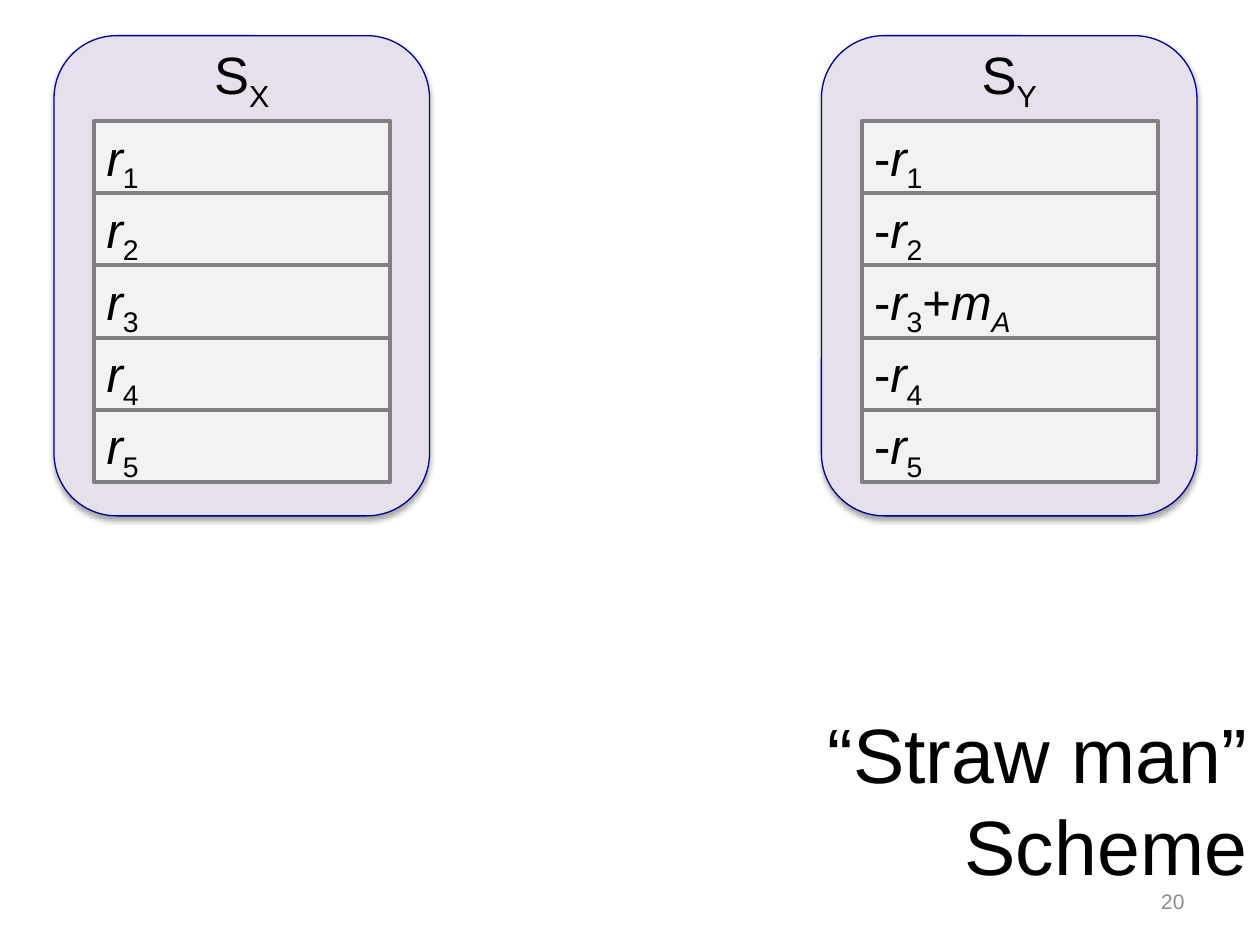
from lxml import etree
from pptx import Presentation
from pptx import util as u
from pptx.dml.color import RGBColor
from pptx.enum import shapes, text
from pptx.oxml import parse_xml

COLORS = {"text": "000000", "server": "E6E0EC", "server_edge": "000090",
          "cell": "F2F2F2", "cell_edge": "808080", "number": "8C8C8C"}
SHADOW = """<a:effectLst xmlns:a="http://schemas.openxmlformats.org/drawingml/2006/main">
<a:outerShdw blurRad="40000" dist="23000" dir="5400000" rotWithShape="0">
<a:srgbClr val="000000"><a:alpha val="35000"/></a:srgbClr></a:outerShdw></a:effectLst>"""


def add_box(kind, left, top, width, height, fill, edge, weight):
    box = slide.shapes.add_shape(kind, u.Cm(left), u.Cm(top), u.Cm(width), u.Cm(height))
    box.shadow.inherit = False
    box.fill.solid()
    box.fill.fore_color.rgb = RGBColor.from_string(COLORS[fill])
    box.line.color.rgb = RGBColor.from_string(COLORS[edge])
    box.line.width = u.Pt(weight)
    return box


def write(frame, runs, size, align, color="text"):
    """Fill the first paragraph; each run is (text, style), style using i = italic, _ = subscript."""
    frame.word_wrap = True
    paragraph = frame.paragraphs[0]
    paragraph.alignment = align
    paragraph.font.size = u.Pt(size)
    paragraph.font.name = "Arial"
    paragraph.font.color.rgb = RGBColor.from_string(COLORS[color])
    for wording, style in runs:
        run = paragraph.add_run()
        run.text = wording
        run.font.size = u.Pt(size)
        run.font.name = "Arial"
        run.font.color.rgb = RGBColor.from_string(COLORS[color])
        run.font.italic = "i" in style
        if "_" in style:
            run.font._element.set("baseline", "-25000")


prs = Presentation()
prs.slide_width, prs.slide_height = u.Cm(25.4), u.Cm(19.05)
slide = prs.slides.add_slide(prs.slide_layouts[5])

# Title
title = slide.shapes.title
title.left, title.top, title.width, title.height = u.Cm(15.85), u.Cm(13.94), u.Cm(9.55), u.Cm(4.32)
title.text_frame.text = "“Straw man”\vScheme"
title.text_frame.auto_size = text.MSO_AUTO_SIZE.NONE
title.text_frame.vertical_anchor = text.MSO_ANCHOR.MIDDLE
write(title.text_frame, [], 44, text.PP_ALIGN.RIGHT)

# Slide number
number = slide.shapes.add_textbox(u.Cm(18.21), u.Cm(17.65), u.Cm(5.92), u.Cm(1.02))
number.text_frame.vertical_anchor = text.MSO_ANCHOR.MIDDLE
write(number.text_frame, [("20", "")], 12, text.PP_ALIGN.RIGHT, "number")

# Two servers, each holding five shares
server_top, server_width, row_height = 0.72, 7.57, 1.455
message = [("+", ""), ("m", "i"), ("A", "i_")]
for name, left, sign in (("X", 1.09, []), ("Y", 16.56, [("-", "")])):
    server = add_box(shapes.MSO_SHAPE.ROUNDED_RECTANGLE, left, server_top, server_width, 9.68,
                     "server", "server_edge", 0.75)
    server._element.spPr.remove(server._element.spPr[-1])
    server._element.spPr.append(parse_xml(SHADOW))

    label = slide.shapes.add_textbox(u.Cm(left), u.Cm(server_top), u.Cm(server_width), u.Cm(1.54))
    write(label.text_frame, [("S", ""), (name, "_")], 30, text.PP_ALIGN.CENTER)

    for row in range(5):
        share = add_box(shapes.MSO_SHAPE.RECTANGLE, left + 0.81, 2.44 + row * row_height,
                        5.97, row_height, "cell", "cell_edge", 2.25)
        share.text_frame.vertical_anchor = text.MSO_ANCHOR.TOP
        runs = sign + [("r", "i"), (str(row + 1), "_")]
        if name == "Y" and row == 2:
            runs += message
        write(share.text_frame, runs, 28, text.PP_ALIGN.LEFT)

prs.save("out.pptx")
